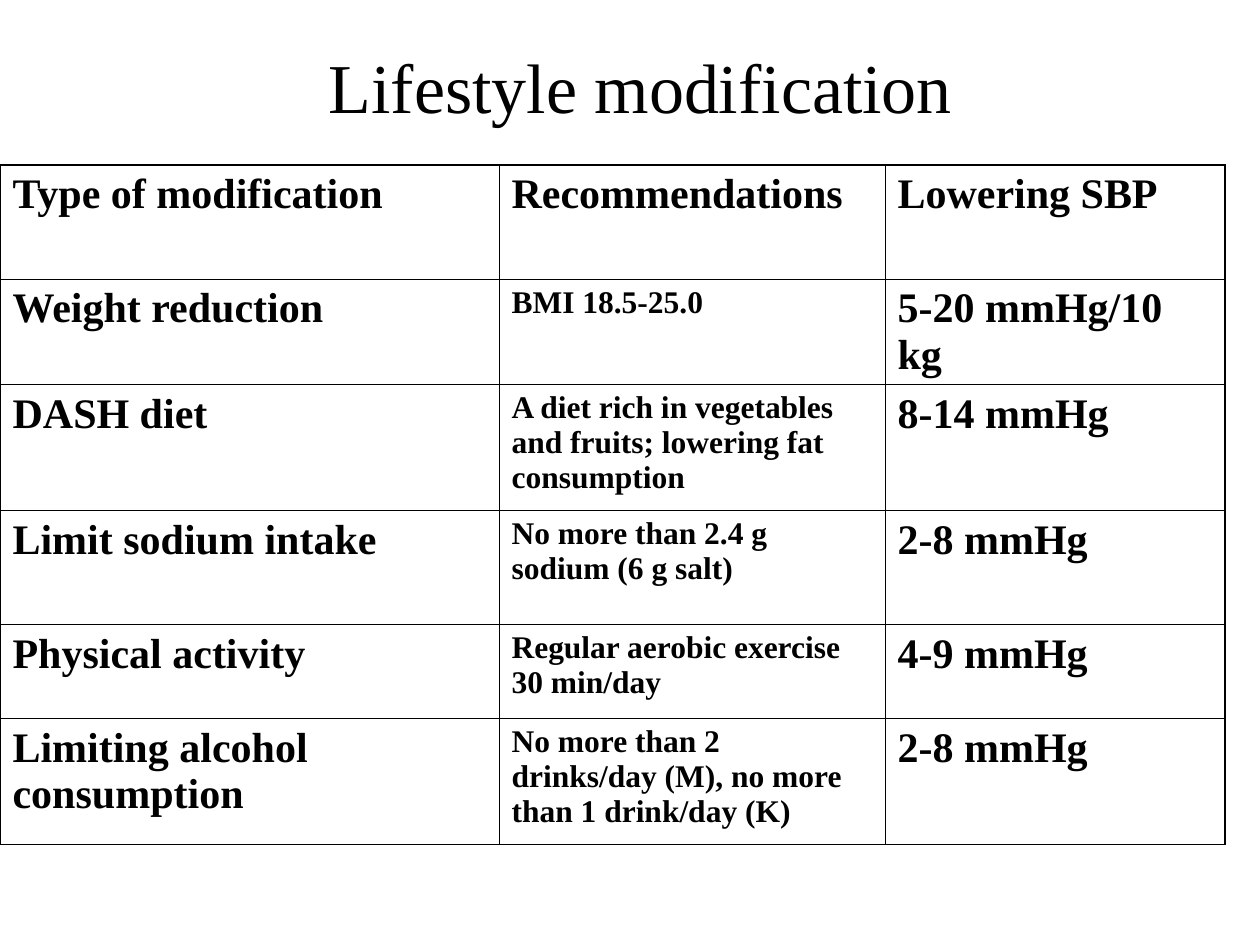
from pptx import Presentation
from pptx.dml.color import RGBColor
from pptx.enum.text import MSO_ANCHOR, PP_ALIGN
from pptx.oxml.ns import qn
from pptx.util import Pt
from lxml.etree import SubElement

PX = 914400 // 126
FONT = "Times New Roman"
COLORS = {"text": "000000", "border": "000000"}
OUTER_WIDTH, INNER_WIDTH = Pt(1.08), Pt(0.45)
COLUMN_WIDTHS = [499, 386, 340]
ROW_HEIGHTS = [114, 94, 126, 114, 94, 126]
ROWS = [
    ("Type of modification", "Recommendations", "Lowering SBP"),
    ("Weight reduction", "BMI 18.5-25.0", "5-20 mmHg/10 kg"),
    ("DASH diet", "A diet rich in vegetables and fruits; lowering fat consumption", "8-14 mmHg"),
    ("Limit sodium intake", "No more than 2.4 g sodium (6 g salt)", "2-8 mmHg"),
    ("Physical activity", "Regular aerobic exercise 30 min/day", "4-9 mmHg"),
    ("Limiting alcohol consumption", "No more than 2 drinks/day (M), no more than 1 drink/day (K)", "2-8 mmHg"),
]


def add_text(paragraph, text, size, bold=False):
    run = paragraph.add_run()
    run.text = text
    run.font.name = FONT
    run.font.size = Pt(size)
    run.font.bold = bold
    run.font.color.rgb = RGBColor.from_string(COLORS["text"])


def add_title(slide, text):
    title = slide.shapes.title
    title.left, title.top, title.width, title.height = 105 * PX, 35 * PX, 1071 * PX, 100 * PX
    title.text_frame.vertical_anchor = MSO_ANCHOR.MIDDLE
    paragraph = title.text_frame.paragraphs[0]
    paragraph.alignment = PP_ALIGN.CENTER
    add_text(paragraph, text, 40)


def set_borders(cell, outer_sides):
    properties = cell._tc.get_or_add_tcPr()
    for side, is_outer in outer_sides.items():
        width = OUTER_WIDTH if is_outer else INNER_WIDTH
        line = SubElement(properties, qn(f"a:{side}"), w=str(int(width)))
        fill = SubElement(line, qn("a:solidFill"))
        SubElement(fill, qn("a:srgbClr"), val=COLORS["border"])


def fill_cell(cell, text, is_detail):
    paragraph = cell.text_frame.paragraphs[0]
    paragraph.space_before = Pt(4.5 if is_detail else 6)
    add_text(paragraph, text, 18 if is_detail else 24, bold=True)


def add_modification_table(slide):
    frame = slide.shapes.add_table(
        len(ROWS), len(COLUMN_WIDTHS), 0, 165 * PX,
        sum(COLUMN_WIDTHS) * PX, sum(ROW_HEIGHTS) * PX,
    )
    table = frame.table
    table.horz_banding = False
    table.first_row = False
    for column, width in zip(table.columns, COLUMN_WIDTHS):
        column.width = width * PX
    last_row, last_column = len(ROWS) - 1, len(COLUMN_WIDTHS) - 1
    for row_index, (texts, height) in enumerate(zip(ROWS, ROW_HEIGHTS)):
        table.rows[row_index].height = height * PX
        for column_index, text in enumerate(texts):
            cell = table.cell(row_index, column_index)
            fill_cell(cell, text, row_index > 0 and column_index == 1)
            set_borders(cell, {
                "lnL": column_index == 0,
                "lnR": column_index == last_column,
                "lnT": row_index == 0,
                "lnB": row_index == last_row,
            })
            cell.fill.background()


def main():
    presentation = Presentation()
    presentation.slide_width, presentation.slide_height = 1260 * PX, 945 * PX
    slide = presentation.slides.add_slide(presentation.slide_layouts[5])
    add_title(slide, "Lifestyle modification")
    add_modification_table(slide)
    presentation.save("out.pptx")


if __name__ == "__main__":
    main()
